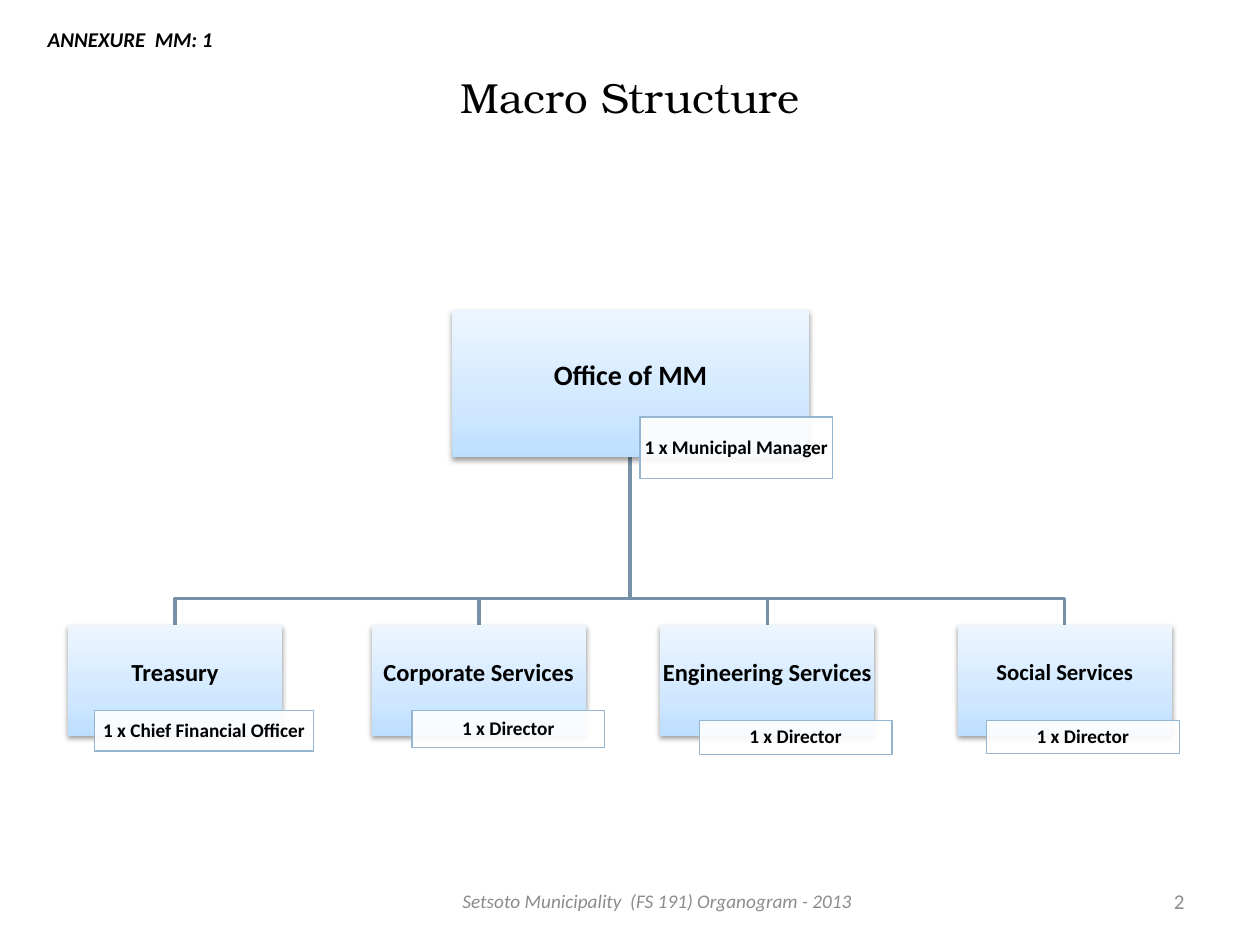
from lxml import etree
from pptx import Presentation
from pptx.dml.color import RGBColor
from pptx.enum import shapes, text
from pptx.oxml import parse_xml
from pptx.oxml.ns import nsdecls, qn
from pptx.util import Inches, Pt

BLACK = RGBColor(0x00, 0x00, 0x00)
WHITE = RGBColor(0xFF, 0xFF, 0xFF)
GRAY = RGBColor(0x8C, 0x8C, 0x8C)
LINK = RGBColor(0x77, 0x92, 0xA8)
BORDER = RGBColor(0x94, 0xB6, 0xD2)
GRADIENT = (
    (0, RGBColor(0xBD, 0xDF, 0xFF)),
    (35, RGBColor(0xD0, 0xE8, 0xFF)),
    (100, RGBColor(0xED, 0xF6, 0xFF)),
)

LEFT, CENTER, RIGHT = text.PP_ALIGN.LEFT, text.PP_ALIGN.CENTER, text.PP_ALIGN.RIGHT
MIDDLE, TOP = text.MSO_ANCHOR.MIDDLE, text.MSO_ANCHOR.TOP
UNIT_MARGINS = (0.01, 0.01, 0.01, 0.12)
POST_MARGINS = (0.03, 0.01, 0.03, 0.01)
TEXT_MARGINS = (0.1, 0.05, 0.1, 0.05)

# Boxes are left, top, width, height in inches
OFFICE = (3.59, 2.46, 2.83, 1.17)
OFFICE_POST = (5.08, 3.31, 1.53, 0.49)
UNIT_TOP, UNIT_WIDTH, UNIT_HEIGHT = 4.96, 1.7, 0.88
TRUNK_X, BUS_Y = 5, 4.75

# Name, text size, left edge, post, box of the post
DEPARTMENTS = (
    ("Treasury", 14, 0.54, "1 x Chief Financial Officer", (0.75, 5.64, 1.74, 0.32)),
    ("Corporate Services", 14, 2.95, "1 x Director", (3.27, 5.64, 1.53, 0.29)),
    ("Engineering Services", 14, 5.24, "1 x Director", (5.55, 5.72, 1.53, 0.27)),
    ("Social Services", 13, 7.6, "1 x Director", (7.83, 5.72, 1.53, 0.26)),
)


def write(shape, words, size, color=BLACK, align=CENTER, anchor=MIDDLE,
          margins=TEXT_MARGINS, spacing=None, name="Calibri", **styles):
    """Fill a shape with one formatted paragraph."""
    frame = shape.text_frame
    frame.word_wrap = True
    frame.vertical_anchor = anchor
    for side, margin in zip(("left", "top", "right", "bottom"), margins):
        setattr(frame, f"margin_{side}", Inches(margin))
    para = frame.paragraphs[0]
    para.alignment = align
    para.line_spacing = spacing
    span = para.add_run()
    span.text = words
    span.font.color.rgb = color
    formats = {"size": Pt(size), "name": name, **styles}
    for key, value in formats.items():
        setattr(span.font, key, value)


def add_label(page, box, words, size, **formats):
    label = page.shapes.add_textbox(*map(Inches, box))
    write(label, words, size, **formats)


def add_rectangle(page, box):
    rectangle = page.shapes.add_shape(
        shapes.MSO_SHAPE.RECTANGLE, *map(Inches, box))
    rectangle.shadow.inherit = False
    return rectangle


def add_unit(page, box, words, size):
    """Add a shaded organisational unit with a soft shadow."""
    unit = add_rectangle(page, box)
    unit.line.fill.background()
    stops = "".join(
        f'<a:gs pos="{place * 1000}"><a:srgbClr val="{color}"/></a:gs>'
        for place, color in GRADIENT)
    properties = unit._element.spPr
    properties.find(qn("a:prstGeom")).addnext(parse_xml(
        f'<a:gradFill {nsdecls("a")} rotWithShape="1"><a:gsLst>{stops}</a:gsLst>'
        '<a:lin ang="16200000" scaled="0"/></a:gradFill>'))
    properties.find(qn("a:effectLst")).append(parse_xml(
        f'<a:outerShdw {nsdecls("a")} blurRad="40000" dist="20000" dir="5400000"'
        ' rotWithShape="0"><a:srgbClr val="000000"><a:alpha val="38000"/>'
        '</a:srgbClr></a:outerShdw>'))
    write(unit, words, size, margins=UNIT_MARGINS, spacing=0.9, bold=True)


def add_post(page, box, words):
    """Add the slightly transparent post tag of a unit."""
    post = add_rectangle(page, box)
    post.fill.solid()
    post.fill.fore_color.rgb = WHITE
    color = post._element.spPr.find(qn("a:solidFill"))[0]
    etree.SubElement(color, qn("a:alpha"), val="90000")
    post.line.color.rgb = BORDER
    post.line.width = Pt(0.75)
    write(post, words, 11, margins=POST_MARGINS, spacing=0.9, bold=True)


def add_branch(page, end_x):
    """Add the angled line from the office down to a department."""
    start_y = OFFICE[1] + OFFICE[3]
    corners = ((TRUNK_X, BUS_Y), (end_x, BUS_Y), (end_x, UNIT_TOP))
    builder = page.shapes.build_freeform(Inches(TRUNK_X), Inches(start_y))
    builder.add_line_segments(
        [(Inches(x), Inches(y)) for x, y in corners], close=False)
    branch = builder.convert_to_shape()
    branch.shadow.inherit = False
    branch.fill.background()
    branch.line.color.rgb = LINK
    branch.line.width = Pt(2)


def add_title(page, box, words):
    title = page.shapes.title
    title.left, title.top, title.width, title.height = map(Inches, box)
    write(title, words, 24, name="TeX Gyre Bonum")


def main():
    deck = Presentation()
    deck.slide_width, deck.slide_height = Inches(10), Inches(7.5)
    page = deck.slides.add_slide(deck.slide_layouts[5])
    add_title(page, (0.5, 0.3, 9, 0.93), "Macro Structure")

    # Lines lie behind the boxes
    for _, _, left, _, _ in reversed(DEPARTMENTS):
        add_branch(page, left + UNIT_WIDTH / 2)

    # Organisation chart
    add_unit(page, OFFICE, "Office of MM", 16)
    add_post(page, OFFICE_POST, "1 x Municipal Manager")
    for name, size, left, post, post_box in DEPARTMENTS:
        add_unit(page, (left, UNIT_TOP, UNIT_WIDTH, UNIT_HEIGHT), name, size)
        add_post(page, post_box, post)

    # Footer and annexure mark
    add_label(page, (7.17, 6.95, 2.33, 0.4), "2", 12, color=GRAY, align=RIGHT)
    add_label(page, (3.42, 6.95, 3.63, 0.4),
              "Setsoto Municipality  (FS 191) Organogram - 2013 ", 11,
              color=GRAY, italic=True)
    add_label(page, (0.28, 0.16, 1.97, 0.3), "ANNEXURE  MM: 1", 12,
              align=LEFT, anchor=TOP, bold=True, italic=True)

    deck.save("out.pptx")


if __name__ == "__main__":
    main()
